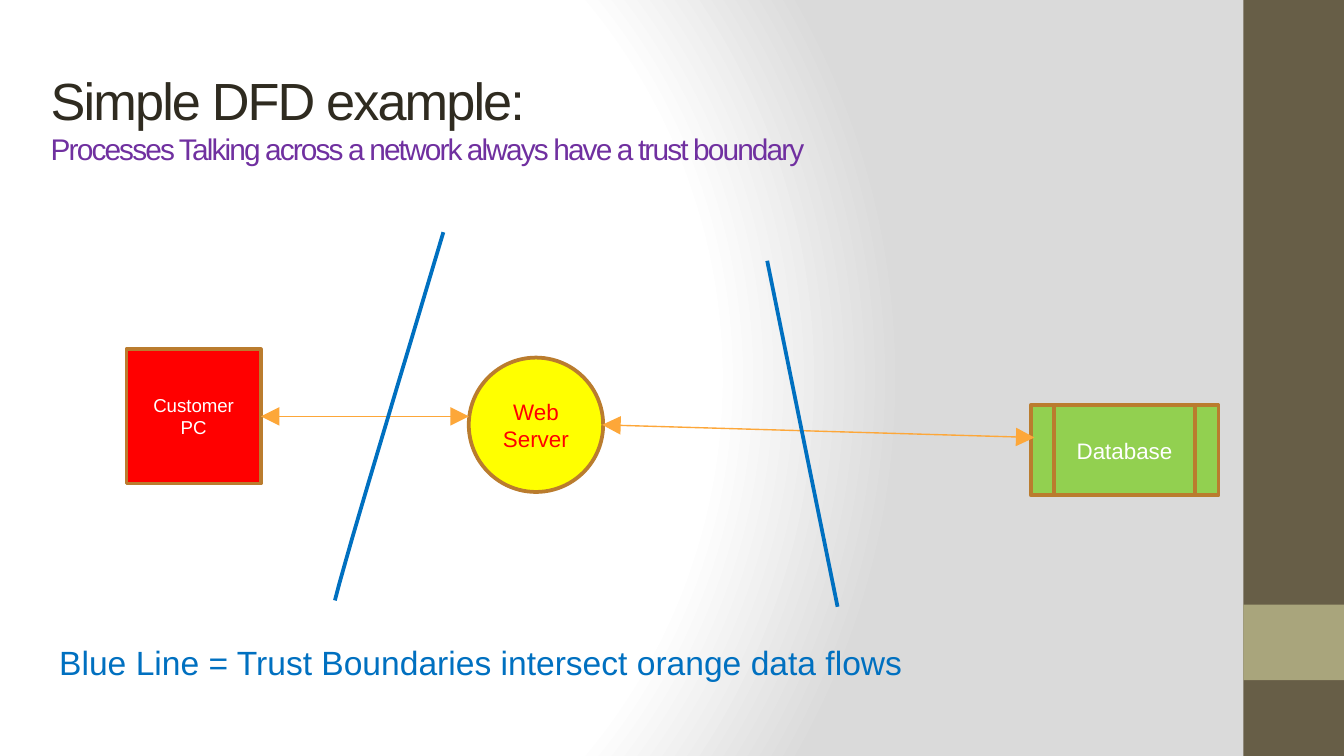
"""Build a simple data flow diagram slide with trust boundaries."""
import pptx
import pptx.dml.color
import pptx.enum.shapes
import pptx.enum.text
import pptx.oxml
import pptx.oxml.ns
import pptx.util

Cm = pptx.util.Cm
Pt = pptx.util.Pt
RGBColor = pptx.dml.color.RGBColor
SHAPES = pptx.enum.shapes.MSO_SHAPE

WHITE = RGBColor(0xFF, 0xFF, 0xFF)
RED = RGBColor(0xFF, 0x00, 0x00)
YELLOW = RGBColor(0xFF, 0xFF, 0x00)
GREEN = RGBColor(0x92, 0xD0, 0x50)
BLUE = RGBColor(0x00, 0x70, 0xC0)
PURPLE = RGBColor(0x70, 0x30, 0xA0)
INK = RGBColor(0x2F, 0x2B, 0x20)
BROWN = RGBColor(0xBA, 0x7C, 0x2E)
ORANGE = RGBColor(0xFD, 0xA7, 0x39)
OLIVE = RGBColor(0x67, 0x5E, 0x47)
SAGE = RGBColor(0xA9, 0xA5, 0x7C)
HAZE = RGBColor(0xDA, 0xDA, 0xDA)


class Diagram:
    """Hold the style and the current page."""

    font = "Arial"
    heavy = Pt(2)
    thin = Pt(0.75)

    def __init__(self, page):
        self.page = page

    def background(self, stops):
        """Fill the page with a circular gradient."""
        fill = self.page.background.fill
        fill.solid()
        marks = "".join(
            f'<a:gs pos="{percent * 1000}"><a:srgbClr val="{color}"/></a:gs>'
            for percent, color in stops
        )
        gradient = pptx.oxml.parse_xml(
            f'<a:gradFill rotWithShape="1" {pptx.oxml.ns.nsdecls("a")}><a:gsLst>{marks}</a:gsLst>'
            '<a:path path="circle"><a:fillToRect l="20000" t="50000" r="100000" b="50000"/>'
            "</a:path></a:gradFill>"
        )
        solid = self.page.element.find(".//" + pptx.oxml.ns.qn("a:solidFill"))
        solid.getparent().replace(solid, gradient)

    def span(self, para, words, size, color, spacing=0):
        """Add one run to a paragraph."""
        span = para.add_run()
        span.text = words
        span.font.name = self.font
        span.font.size = Pt(size)
        span.font.color.rgb = color
        if spacing:
            span.font._element.set("spc", str(spacing * 100))

    def text(self, left, top, width, height, lines, spacing=0):
        """Add a text box whose lines share one paragraph."""
        box = self.page.shapes.add_textbox(Cm(left), Cm(top), Cm(width), Cm(height))
        frame = box.text_frame
        frame.word_wrap = True
        frame.margin_top = frame.margin_bottom = Cm(0.25)
        para = frame.paragraphs[0]
        for index, (words, size, color) in enumerate(lines):
            if index:
                para.add_line_break()
            self.span(para, words, size, color, spacing)

    def block(self, kind, left, top, width, height, color):
        """Add a plain filled shape."""
        box = self.page.shapes.add_shape(kind, Cm(left), Cm(top), Cm(width), Cm(height))
        box.shadow.inherit = False
        box.fill.solid()
        box.fill.fore_color.rgb = color
        box.line.fill.background()
        return box

    def node(self, kind, left, top, width, height, color, words, size, ink):
        """Add an outlined shape with a centred label."""
        box = self.block(kind, left, top, width, height, color)
        box.line.color.rgb = BROWN
        box.line.width = self.heavy
        frame = box.text_frame
        frame.word_wrap = True
        frame.vertical_anchor = pptx.enum.text.MSO_ANCHOR.MIDDLE
        para = frame.paragraphs[0]
        para.alignment = pptx.enum.text.PP_ALIGN.CENTER
        self.span(para, words, size, ink)
        return box

    def flow(self, start, end, source=None):
        """Add a two-way data flow arrow."""
        arrow = self.page.shapes.add_connector(
            pptx.enum.shapes.MSO_CONNECTOR.STRAIGHT, *map(Cm, start + end)
        )
        if source is not None:
            arrow.begin_connect(source, 3)
        arrow.line.color.rgb = ORANGE
        arrow.line.width = self.thin
        outline = arrow.line._get_or_add_ln()
        for tag in ("a:headEnd", "a:tailEnd"):
            tip = pptx.oxml.parse_xml(
                f'<{tag} {pptx.oxml.ns.nsdecls("a")} type="triangle" w="lg" len="lg"/>'
            )
            outline.append(tip)
        effects = pptx.oxml.parse_xml(f'<a:effectLst {pptx.oxml.ns.nsdecls("a")}/>')
        arrow._element.spPr.append(effects)

    def boundary(self, points):
        """Add an open trust boundary line through the points."""
        track = [(Cm(x), Cm(y)) for x, y in points]
        builder = self.page.shapes.build_freeform(*track[0])
        builder.add_line_segments(track[1:], close=False)
        line = builder.convert_to_shape()
        line.shadow.inherit = False
        line.fill.background()
        line.line.color.rgb = BLUE
        line.line.width = self.heavy


def curve(corners, steps=12):
    """Return points along a cubic curve."""
    points = []
    for step in range(steps + 1):
        t = step / steps
        weights = ((1 - t) ** 3, 3 * t * (1 - t) ** 2, 3 * t ** 2 * (1 - t), t ** 3)
        points.append(tuple(
            sum(weight * corner[axis] for weight, corner in zip(weights, corners))
            for axis in (0, 1)
        ))
    return points


def main():
    """Draw the slide and save it."""
    deck = pptx.Presentation()
    deck.slide_width, deck.slide_height = Cm(25.4), Cm(14.29)
    diagram = Diagram(deck.slides.add_slide(deck.slide_layouts[6]))

    diagram.background([(0, WHITE), (75, WHITE), (100, HAZE)])
    diagram.block(SHAPES.RECTANGLE, 23.5, 0, 1.9, 14.29, OLIVE)
    diagram.block(SHAPES.RECTANGLE, 23.5, 11.43, 1.9, 1.43, SAGE)

    diagram.text(0.71, 1.04, 23.67, 2.3, [
        ("Simple DFD example:", 28, INK),
        ("Processes Talking across a network always have a trust boundary", 16, PURPLE),
    ], spacing=-1)
    diagram.text(0.87, 11.89, 22.5, 1.3, [
        ("Blue Line = Trust Boundaries intersect orange data flows", 18, BLUE),
    ])

    diagram.node(SHAPES.OVAL, 8.86, 6.76, 2.54, 2.54, YELLOW, "Web Server", 12, RED)
    customer = diagram.node(
        SHAPES.RECTANGLE, 2.39, 6.6, 2.54, 2.54, RED, "Customer PC", 10, WHITE)
    diagram.node(SHAPES.FLOWCHART_PREDEFINED_PROCESS, 19.48, 7.66, 3.55, 1.7,
                 GREEN, "Database", 12, WHITE)

    diagram.flow((11.38, 8.03), (19.55, 8.27))
    diagram.flow((4.93, 7.87), (8.86, 7.87), customer)

    diagram.boundary(curve([(8.38, 4.39), (7.52, 7.29), (6.63, 10.19), (6.33, 11.35)]))
    diagram.boundary([(14.5, 4.93), (15.83, 11.47)])

    deck.save("out.pptx")


if __name__ == "__main__":
    main()
